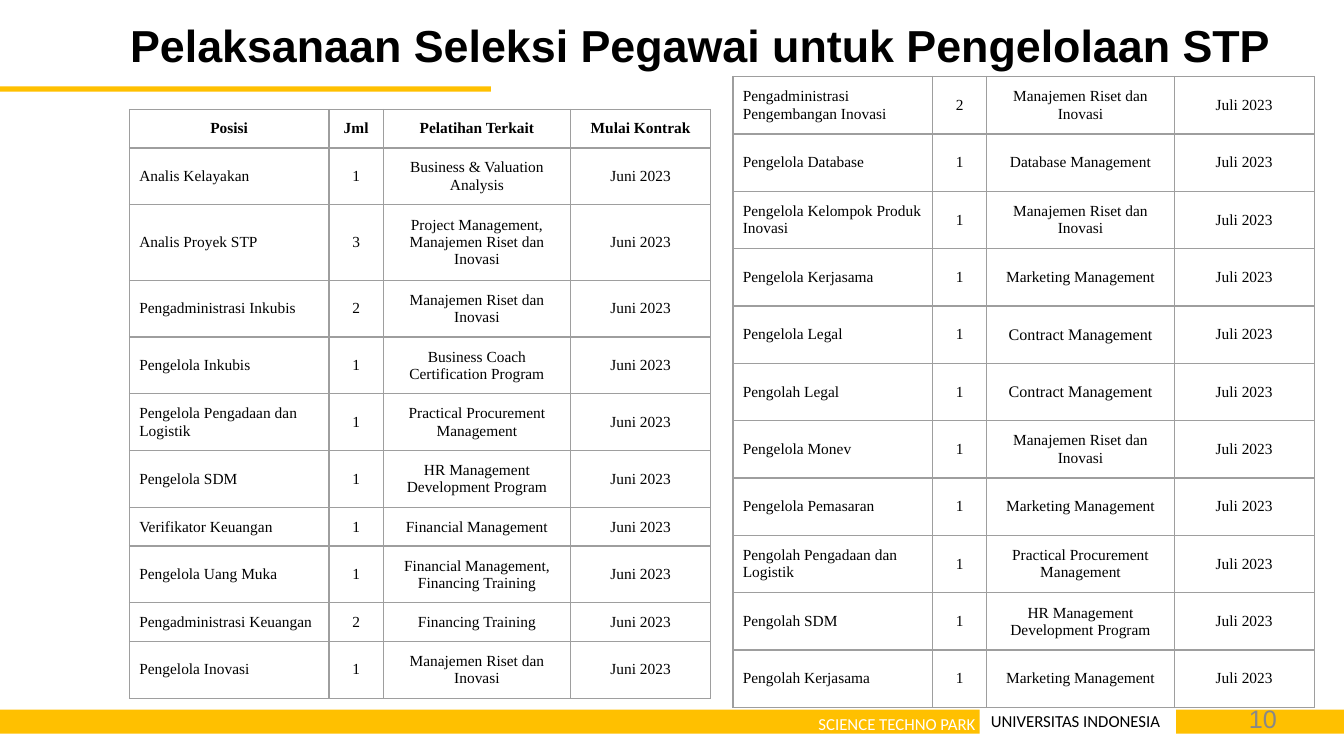
from dataclasses import dataclass

from lxml import etree
from pptx import Presentation
from pptx.dml.color import RGBColor
from pptx.enum import shapes, text
from pptx.oxml.ns import qn
from pptx.util import Cm, Pt

COLORS = {"gold": "FFC000", "white": "FFFFFF", "black": "000000",
          "page": "888888", "border": "9E9E9E"}
LEFT, CENTER, RIGHT = text.PP_ALIGN.LEFT, text.PP_ALIGN.CENTER, text.PP_ALIGN.RIGHT
COLUMN_WIDTHS = (5.03, 1.37, 4.72, 3.53)
CELL_MARGIN = 0.25
LINE_HEIGHT = 0.46
RISET = "Manajemen Riset dan Inovasi"


@dataclass
class Band:
    left: float
    top: float
    width: float
    height: float


@dataclass
class Label:
    content: str
    left: float
    top: float
    width: float
    height: float
    size: float
    font: str
    color: str
    align: text.PP_ALIGN = LEFT
    bold: bool = False


@dataclass
class Position:
    name: str
    count: int
    training: str
    lines: int = 2
    size: float = 11


BANDS = [
    Band(0, 2.18, 12.37, 0.13),
    Band(0, 17.88, 24.69, 0.61),
    Band(29.64, 17.88, 4.23, 0.61),
]

LABELS = [
    Label("SCIENCE TECHNO PARK", 15.8, 17.96, 8.79, 0.53, 12, "Calibri", "white", RIGHT),
    Label("UNIVERSITAS INDONESIA", 24.97, 17.88, 4.39, 0.53, 12, "Calibri", "black"),
    Label("10", 24.38, 17.7, 7.8, 0.97, 18, "Arial", "page", RIGHT),
    Label("Pelaksanaan Seleksi Pegawai untuk Pengelolaan STP",
          3.28, 0.41, 29.87, 1.4, 32, "Arial", "black", bold=True),
]

HEADER = ("Posisi", "Jml", "Pelatihan Terkait", "Mulai Kontrak")
JUNE = [
    Position("Analis Kelayakan", 1, "Business & Valuation Analysis"),
    Position("Analis Proyek STP", 3, f"Project Management, {RISET}", 3),
    Position("Pengadministrasi Inkubis", 2, RISET),
    Position("Pengelola Inkubis", 1, "Business Coach Certification Program"),
    Position("Pengelola Pengadaan dan Logistik", 1, "Practical Procurement Management"),
    Position("Pengelola SDM", 1, "HR Management Development Program"),
    Position("Verifikator Keuangan", 1, "Financial Management", 1),
    Position("Pengelola Uang Muka", 1, "Financial Management, Financing Training"),
    Position("Pengadministrasi Keuangan", 2, "Financing Training", 1),
    Position("Pengelola Inovasi", 1, RISET),
]
JULY = [
    Position("Pengadministrasi Pengembangan Inovasi", 2, RISET),
    Position("Pengelola Database", 1, "Database Management"),
    Position("Pengelola Kelompok Produk Inovasi", 1, RISET),
    Position("Pengelola Kerjasama", 1, "Marketing Management"),
    Position("Pengelola Legal", 1, "Contract Management", size=11.5),
    Position("Pengolah Legal", 1, "Contract Management", size=11.5),
    Position("Pengelola Monev", 1, RISET),
    Position("Pengelola Pemasaran", 1, "Marketing Management"),
    Position("Pengolah Pengadaan dan Logistik", 1, "Practical Procurement Management"),
    Position("Pengolah SDM", 1, "HR Management Development Program"),
    Position("Pengolah Kerjasama", 1, "Marketing Management"),
]


def rgb(name: str) -> RGBColor:
    return RGBColor.from_string(COLORS[name])


def write(p, content: str, align: text.PP_ALIGN, color: str, **font) -> None:
    p.alignment = align
    r = p.add_run()
    r.text = content
    for key, value in font.items():
        setattr(r.font, key, value)
    r.font.color.rgb = rgb(color)


def draw_band(slide, band: Band) -> None:
    sp = slide.shapes.add_shape(shapes.MSO_SHAPE.RECTANGLE, Cm(band.left), Cm(band.top),
                                Cm(band.width), Cm(band.height))
    sp.shadow.inherit = False
    sp.fill.solid()
    sp.fill.fore_color.rgb = rgb("gold")
    sp.line.fill.background()


def draw_label(slide, label: Label) -> None:
    sp = slide.shapes.add_textbox(Cm(label.left), Cm(label.top),
                                  Cm(label.width), Cm(label.height))
    tf = sp.text_frame
    frame = {"word_wrap": True, "auto_size": text.MSO_AUTO_SIZE.SHAPE_TO_FIT_TEXT,
             "margin_left": 0, "margin_right": 0, "margin_top": Cm(0.03), "margin_bottom": 0}
    for key, value in frame.items():
        setattr(tf, key, value)
    write(tf.paragraphs[0], label.content, label.align, label.color,
          size=Pt(label.size), name=label.font, bold=label.bold)


def add_borders(cell) -> None:
    props = cell._tc.get_or_add_tcPr()
    for side in ("lnL", "lnR", "lnT", "lnB"):
        line = etree.SubElement(props, qn(f"a:{side}"), w=str(Pt(1)))
        fill = etree.SubElement(line, qn("a:solidFill"))
        etree.SubElement(fill, qn("a:srgbClr"), val=COLORS["border"])


def fill_cell(cell, content: str, align: text.PP_ALIGN, size: float, bold: bool) -> None:
    add_borders(cell)
    cell.fill.background()
    cell.vertical_anchor = text.MSO_ANCHOR.MIDDLE
    for side in ("left", "right", "top", "bottom"):
        setattr(cell, f"margin_{side}", Cm(CELL_MARGIN))
    write(cell.text_frame.paragraphs[0], content, align, "black",
          size=Pt(size), name="Times New Roman", bold=bold)


def draw_table(slide, left: float, top: float, heights: list[float],
               positions: list[Position], start: str, header: tuple[str, ...] = ()) -> None:
    table = slide.shapes.add_table(len(heights), len(COLUMN_WIDTHS), Cm(left), Cm(top),
                                   Cm(sum(COLUMN_WIDTHS)), Cm(sum(heights))).table
    table.first_row = bool(header)
    table.horz_banding = False
    for column, width in zip(table.columns, COLUMN_WIDTHS):
        column.width = Cm(width)
    for row, height in zip(table.rows, heights):
        row.height = Cm(height)
    for col, title in enumerate(header):
        fill_cell(table.cell(0, col), title, CENTER, 11, True)
    for row, position in enumerate(positions, start=1 if header else 0):
        values = (position.name, str(position.count), position.training, start)
        for col, value in enumerate(values):
            fill_cell(table.cell(row, col), value, CENTER if col else LEFT,
                      position.size if col == 2 else 11, False)


def main() -> None:
    prs = Presentation()
    prs.slide_width, prs.slide_height = Cm(33.87), Cm(19.05)
    slide = prs.slides.add_slide(prs.slide_layouts[6])
    for band in BANDS:
        draw_band(slide, band)
    for label in LABELS:
        draw_label(slide, label)
    june_lines = [1] + [position.lines for position in JUNE]
    june_heights = [2 * CELL_MARGIN + LINE_HEIGHT * lines for lines in june_lines]
    draw_table(slide, 3.26, 2.76, june_heights, JUNE, "Juni 2023", HEADER)
    draw_table(slide, 18.47, 1.93, [15.9 / len(JULY)] * len(JULY), JULY, "Juli 2023")
    prs.save("out.pptx")


if __name__ == "__main__":
    main()
